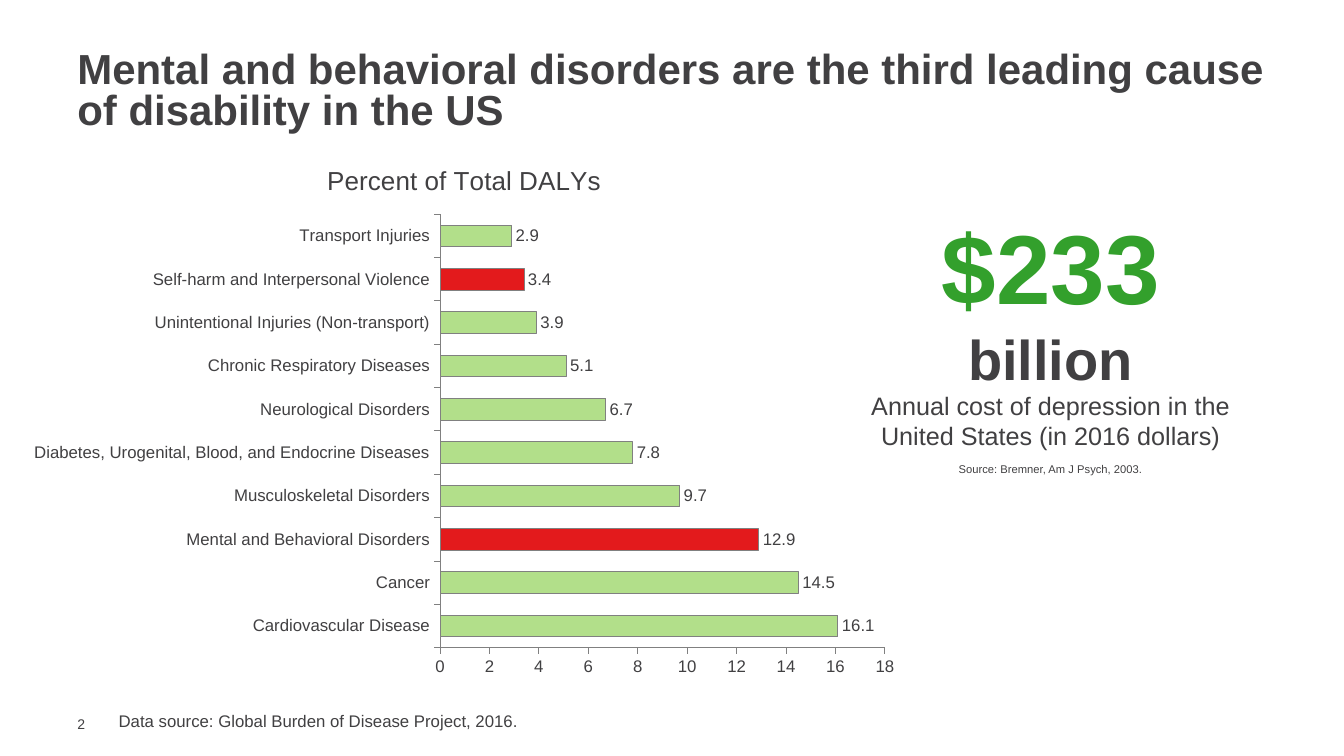
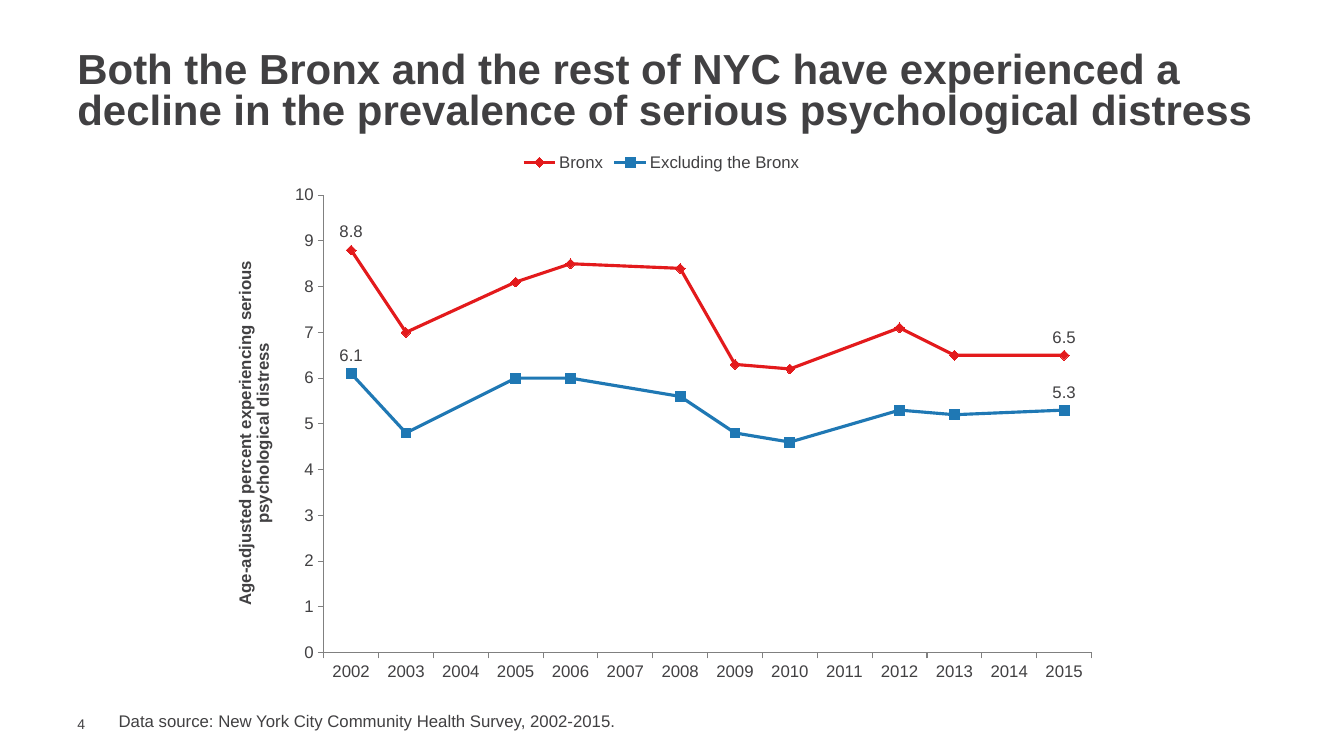
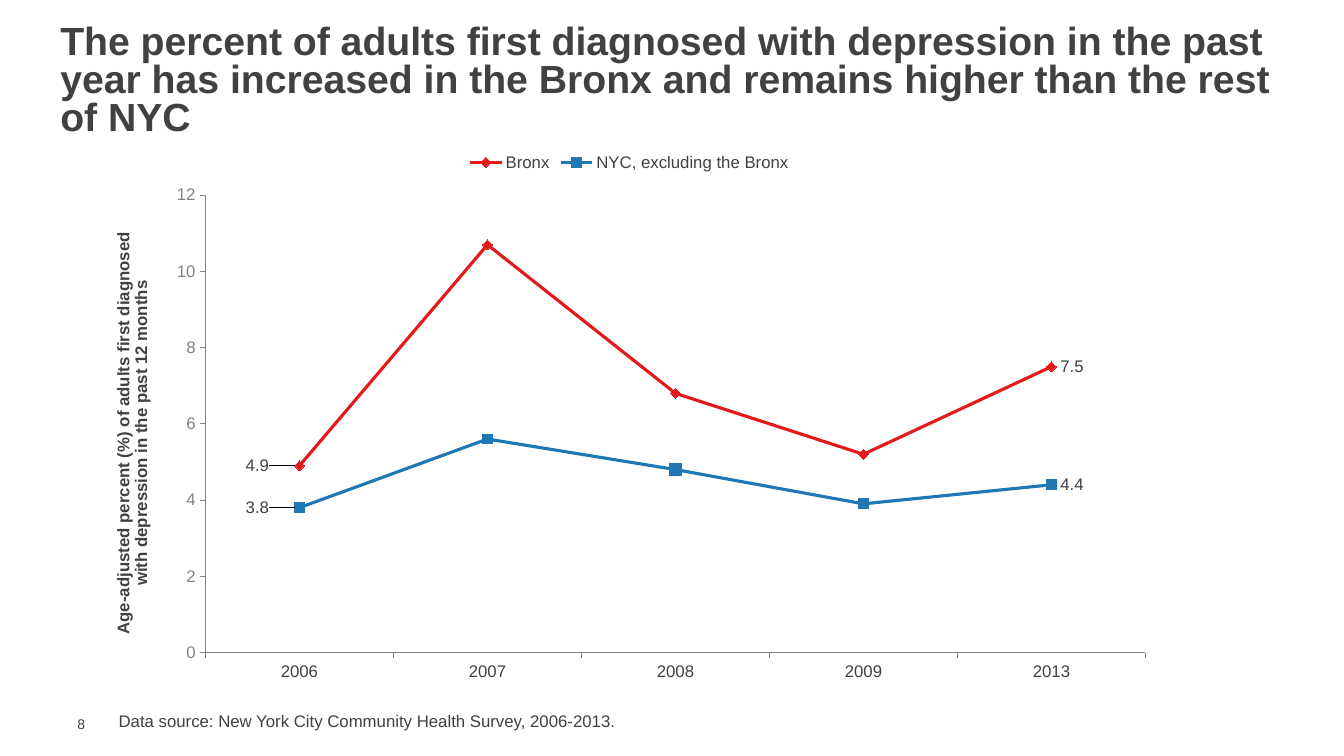
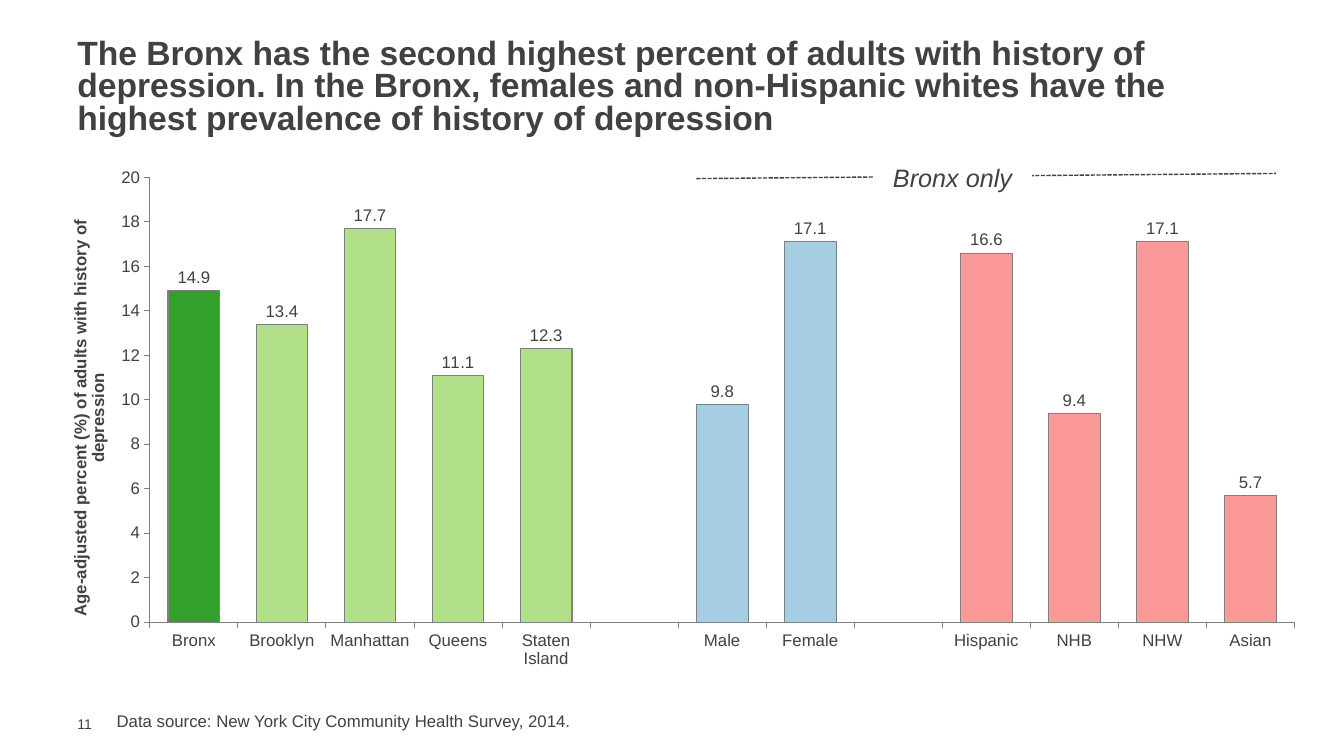
from lxml import etree
from pptx import Presentation
from pptx import util as u
from pptx.chart.data import CategoryChartData
from pptx.dml.color import RGBColor
from pptx.enum import chart as ch, dml, shapes, text
from pptx.oxml import parse_xml
from pptx.oxml.ns import qn

# Shared look
FONT = "Arial"
INK, GREY, AXIS, WHITE = "414042", "838285", "808080", "FFFFFF"
RED, BLUE, GREEN = "E31A1C", "1F78B4", "33A02C"
LIGHT_GREEN, LIGHT_BLUE, PINK = "B2DF8A", "A6CEE3", "FB9A99"
TITLE_BOX = (1.7, 1.19, 30.48, 2.31)
NUMBER_BOX = (1.7, 18.03, 1.09, 0.43)
SOURCE_BOX = (2.74, 17.78, 25.2, 0.76)
CHART_NS = "http://schemas.openxmlformats.org/drawingml/2006/chart"
C15_NS = "http://schemas.microsoft.com/office/drawing/2012/chart"
MARKERS = [(RED, ch.XL_MARKER_STYLE.DIAMOND), (BLUE, ch.XL_MARKER_STYLE.SQUARE)]

# Content: one entry per slide
SURVEY = "Data source: New York City Community Health Survey, "
SLIDES = [
    dict(
        number="2", size=30,
        title="Mental and behavioral disorders are the third leading cause of disability in the US",
        source="Data source: Global Burden of Disease Project, 2016.",
        chart=dict(
            kind="bar", box=(0.41, 3.58, 22.58, 13.72), gap=100, title="Percent of Total DALYs",
            rows=[("Cardiovascular Disease", 16.1), ("Cancer", 14.5),
                  ("Mental and Behavioral Disorders", 12.9), ("Musculoskeletal Disorders", 9.7),
                  ("Diabetes, Urogenital, Blood, and Endocrine Diseases", 7.8),
                  ("Neurological Disorders", 6.7), ("Chronic Respiratory Diseases", 5.1),
                  ("Unintentional Injuries (Non-transport)", 3.9),
                  ("Self-harm and Interpersonal Violence", 3.4), ("Transport Injuries", 2.9)],
            points={2: RED, 8: RED}),
        texts=[
            ((21.46, 5.08, 10.03, 4.95), [("$233", 70, GREEN, True), ("billion", 40, INK, True)]),
            ((21.46, 9.7, 10.03, 1.8),
             [("Annual cost of depression in the United States (in 2016 dollars)", 18, INK, False)]),
            ((20.52, 11.53, 11.91, 0.61), [("Source: Bremner, Am J Psych, 2003.", 8, INK, False)]),
        ]),
    dict(
        number="4", size=30,
        title="Both the Bronx and the rest of NYC have experienced a decline in the prevalence "
              "of serious psychological distress",
        source=SURVEY + "2002-2015.",
        chart=dict(
            kind="line", box=(5.38, 3.58, 22.58, 13.84),
            axis_title="Age-adjusted percent experiencing serious psychological distress",
            categories=[str(year) for year in range(2002, 2016)],
            series={"Bronx": [8.8, 7, None, 8.1, 8.5, None, 8.4, 6.3, 6.2, None, 7.1, 6.5, None, 6.5],
                    "Excluding the Bronx": [6.1, 4.8, None, 6, 6, None, 5.6, 4.8, 4.6, None,
                                            5.3, 5.2, None, 5.3]},
            label_places=("ABOVE", "ABOVE"))),
    dict(
        number="8", size=28, title_box=(1.27, 0.51, 31.12, 3.12),
        title="The percent of adults first diagnosed with depression in the past year has "
              "increased in the Bronx and remains higher than the rest of NYC",
        source=SURVEY + "2006-2013.",
        chart=dict(
            kind="line", box=(2.31, 3.58, 27.1, 13.84), value_color=GREY,
            axis_title="Age-adjusted percent (%) of adults first diagnosed with depression "
                       "in the past 12 months",
            categories=["2006", "2007", "2008", "2009", "2013"],
            series={"Bronx": [4.9, 10.7, 6.8, 5.2, 7.5],
                    "NYC, excluding the Bronx": [3.8, 5.6, 4.8, 3.9, 4.4]},
            label_places=("LEFT", "RIGHT"), first_label_shift=-0.02, large_marker=(1, 2))),
    dict(
        number="11", size=24, title_box=(1.7, 0.86, 30.48, 2.72),
        title="The Bronx has the second highest percent of adults with history of depression. "
              "In the Bronx, females and non-Hispanic whites have the highest prevalence of "
              "history of depression",
        source=SURVEY + "2014.", source_box=(2.69, 17.78, 25.2, 0.76),
        chart=dict(
            kind="column", box=(1.68, 4.09, 31.32, 14.15), gap=70, maximum=20,
            plot=dict(x=0.067, y=0.027, w=0.921, h=0.792),
            axis_title="Age-adjusted percent (%) of adults with history of depression",
            rows=[("Bronx", 14.9), ("Brooklyn", 13.4), ("Manhattan", 17.7), ("Queens", 11.1),
                  ("Staten Island", 12.3), ("", None), ("Male", 9.8), ("Female", 17.1), ("", None),
                  ("Hispanic", 16.6), ("NHB", 9.4), ("NHW", 17.1), ("Asian", 5.7)],
            points={0: GREEN, 6: LIGHT_BLUE, 7: LIGHT_BLUE, 9: PINK, 10: PINK, 11: PINK, 12: PINK}),
        span_line=(17.55, 4.5, 32.16, 4.37),
        span_label=((22, 3.96, 4.01, 1.02), "Bronx only")),
]


def cm(values):
    return [u.Cm(value) for value in values]


def rgb(value):
    return RGBColor.from_string(value)


def paint(fill, color):
    fill.solid()
    fill.fore_color.rgb = rgb(color)


def draw(line, color, width):
    line.color.rgb = rgb(color)
    line.width = u.Pt(width)


def style(font, size, color=INK, bold=False, italic=False):
    font.name, font.size, font.bold, font.italic = FONT, u.Pt(size), bold, italic
    font.color.rgb = rgb(color)


def add_text(page, box, paras, align="LEFT", anchor="TOP", spacing=None):
    """Paragraphs are (words, size, colour, bold)."""
    frame = page.shapes.add_textbox(*cm(box)).text_frame
    frame.word_wrap = True
    frame.vertical_anchor = text.MSO_ANCHOR[anchor]
    for index, (words, *look) in enumerate(paras):
        para = frame.add_paragraph() if index else frame.paragraphs[0]
        para.text = words
        para.alignment = text.PP_ALIGN[align]
        para.line_spacing = spacing
        style(para.font, *look)
    return frame


def manual_layout(**parts):
    layout = parse_xml(f'<c:layout xmlns:c="{CHART_NS}"><c:manualLayout/></c:layout>')
    for tag, value in parts.items():
        etree.SubElement(layout[0], qn("c:" + tag)).set("val", str(value))
    return layout


# Charts
def style_axes(chart, spec_):
    for axis, color in ((chart.category_axis, INK),
                        (chart.value_axis, spec_.get("value_color", INK))):
        axis.has_major_gridlines = False
        axis.major_tick_mark = ch.XL_TICK_MARK.OUTSIDE
        axis.minor_tick_mark = ch.XL_TICK_MARK.NONE
        style(axis.tick_labels.font, 12, color)
        draw(axis.format.line, AXIS, 0.75)
    axis = chart.value_axis
    axis.minimum_scale = 0
    axis.maximum_scale = spec_.get("maximum")
    if "axis_title" in spec_:
        frame = axis.axis_title.text_frame
        frame.text = spec_["axis_title"]
        style(frame.paragraphs[0].font, 12, bold=True)
        body = axis.axis_title.element.find(".//" + qn("a:bodyPr")) if hasattr(
            axis.axis_title, "element") else frame._txBody.find(qn("a:bodyPr"))
        body.set("rot", "-5400000")
        body.set("vert", "horz")


def style_bars(chart, spec_):
    plot = chart.plots[0]
    plot.gap_width = spec_["gap"]
    plot.vary_by_categories = False
    series = plot.series[0]
    series.invert_if_negative = False
    looks = [(series.format, LIGHT_GREEN)]
    looks += [(series.points[i].format, color) for i, color in spec_["points"].items()]
    for look, color in looks:
        paint(look.fill, color)
        draw(look.line, AXIS, 0.75)
    labels = series.data_labels
    labels.show_value = True
    labels.number_format, labels.number_format_is_linked = "#,##0.0", False
    labels.position = ch.XL_LABEL_POSITION.OUTSIDE_END
    style(labels.font, 12)


def style_marker(marker, shape, color, size):
    marker.style, marker.size = shape, size
    paint(marker.format.fill, color)
    draw(marker.format.line, color, 0.75)


def style_lines(chart, spec_):
    chart.has_legend = True
    chart.legend.position = ch.XL_LEGEND_POSITION.TOP
    chart.legend.include_in_layout = False
    style(chart.legend.font, 12)
    chart.element.find(".//" + qn("c:dispBlanksAs")).set("val", "span")
    shift = spec_.get("first_label_shift")
    large_series, large_point = spec_.get("large_marker", (None, None))
    last = len(spec_["categories"]) - 1
    for number, (series, (color, shape)) in enumerate(zip(chart.plots[0].series, MARKERS)):
        series.smooth = False
        draw(series.format.line, color, 2.25)
        style_marker(series.marker, shape, color, 7)
        if number == large_series:
            point = series.points[large_point]
            style_marker(point.marker, shape, color, 9)
            draw(point.format.line, color, 2.25)
        # Only the first and last points carry a value
        series.data_labels.show_value = False
        for index, place in zip((0, last), spec_["label_places"]):
            label = series.points[index].data_label
            style(label.font, 12)
            label.position = ch.XL_LABEL_POSITION[place]
        if shift:
            labels = series.data_labels._element
            labels.find(qn("c:dLbl")).insert(1, manual_layout(x=shift, y=0))
            labels.append(parse_xml(
                f'<c:extLst xmlns:c="{CHART_NS}" xmlns:c15="{C15_NS}">'
                '<c:ext uri="{CE6537A1-D6FC-4f65-9D91-7224C49458BB}">'
                '<c15:showLeaderLines val="1"/></c:ext></c:extLst>'))


KINDS = {"bar": (ch.XL_CHART_TYPE.BAR_CLUSTERED, style_bars),
         "column": (ch.XL_CHART_TYPE.COLUMN_CLUSTERED, style_bars),
         "line": (ch.XL_CHART_TYPE.LINE_MARKERS, style_lines)}


def add_chart(page, spec_):
    kind, style_series = KINDS[spec_["kind"]]
    data = CategoryChartData()
    if "rows" in spec_:
        data.categories = [name for name, _ in spec_["rows"]]
        data.add_series(spec_.get("title", "Series 1"), [value for _, value in spec_["rows"]])
    else:
        data.categories = spec_["categories"]
        for name, values in spec_["series"].items():
            data.add_series(name, values)
    chart = page.shapes.add_chart(kind, *cm(spec_["box"]), data).chart
    style(chart.font, 12)
    chart.has_legend = False
    chart.has_title = "title" in spec_
    if chart.has_title:
        frame = chart.chart_title.text_frame
        frame.text = spec_["title"]
        style(frame.paragraphs[0].font, 18.6)
    style_axes(chart, spec_)
    style_series(chart, spec_)
    if "plot" in spec_:
        area = chart.element.find(".//" + qn("c:plotArea"))
        for old in area.findall(qn("c:layout")):
            area.remove(old)
        area.insert(0, manual_layout(layoutTarget="inner", xMode="edge", yMode="edge",
                                     **spec_["plot"]))


# Dashed span with its label
def add_span(page, ends, box, words):
    line = page.shapes.add_connector(shapes.MSO_CONNECTOR.STRAIGHT, *cm(ends))
    draw(line.line, INK, 1)
    line.line.dash_style = dml.MSO_LINE.SQUARE_DOT
    etree.SubElement(line._element.spPr, qn("a:effectLst"))
    label = page.shapes.add_shape(shapes.MSO_SHAPE.RECTANGLE, *cm(box))
    label.shadow.inherit = False
    paint(label.fill, WHITE)
    label.line.fill.background()
    para = label.text_frame.paragraphs[0]
    para.text = words
    para.alignment = text.PP_ALIGN.CENTER
    label.text_frame.vertical_anchor = text.MSO_ANCHOR.TOP
    style(para.font, 18, italic=True)


def main():
    deck = Presentation()
    deck.slide_width, deck.slide_height = cm((33.87, 19.05))
    for item in SLIDES:
        page = deck.slides.add_slide(deck.slide_layouts[6])
        add_text(page, item.get("title_box", TITLE_BOX),
                 [(item["title"], item["size"], INK, True)], anchor="MIDDLE", spacing=0.8)
        add_chart(page, item["chart"])
        add_text(page, item.get("source_box", SOURCE_BOX), [(item["source"], 12)])
        number = add_text(page, NUMBER_BOX, [(item["number"], 10)], anchor="MIDDLE")
        number.margin_top = number.margin_right = number.margin_bottom = 0
        for box, paras in item.get("texts", []):
            add_text(page, box, paras, align="CENTER")
        if "span_line" in item:
            add_span(page, item["span_line"], *item["span_label"])
    deck.save("out.pptx")


if __name__ == "__main__":
    main()
